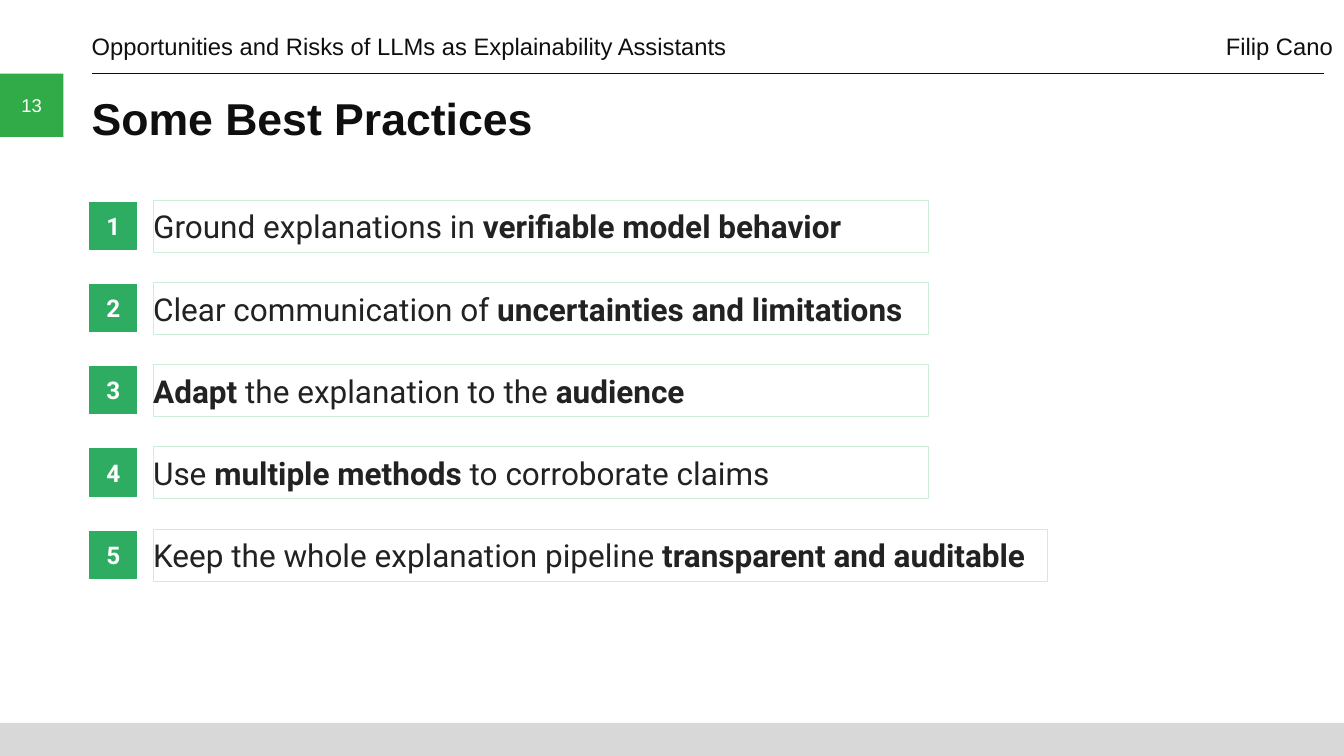
"""Build the slide on best practices for explanations given by language models."""
import lxml.etree
import pptx
import pptx.dml.color
import pptx.enum.shapes
import pptx.enum.text
import pptx.oxml.ns
import pptx.util

Inches = pptx.util.Inches
ALIGN = pptx.enum.text.PP_ALIGN
ANCHOR = pptx.enum.text.MSO_ANCHOR

COLORS = {
    "page_green": "31AB48",
    "badge_green": "2EAD62",
    "box_border": "CFEED9",
    "footer": "D8D8D8",
    "heading": "0F0F0F",
    "body": "222222",
    "white": "FFFFFF",
}

PRACTICES = [
    ("Ground explanations in **verifiable model behavior**", 8.2),
    ("Clear communication of **uncertainties and limitations**", 8.2),
    ("**Adapt** the explanation to the **audience**", 8.2),
    ("Use **multiple methods** to corroborate claims", 8.2),
    ("Keep the whole explanation pipeline **transparent and auditable**", 9.46),
]
FIRST_TOP = 2.12
ROW_STEP = 0.87


def rgb(name):
    return pptx.dml.color.RGBColor.from_string(COLORS[name])


def write_text(shape, text, size, color, font="Arial", bold=False,
               align=ALIGN.LEFT, anchor=ANCHOR.MIDDLE):
    frame = shape.text_frame
    frame.word_wrap = True
    frame.vertical_anchor = anchor
    frame.margin_left = frame.margin_right = 0
    frame.margin_top = frame.margin_bottom = 0
    paragraph = frame.paragraphs[0]
    paragraph.alignment = align
    for index, part in enumerate(text.split("**")):
        if part:
            run = paragraph.add_run()
            run.text = part
            run.font.name = font
            run.font.size = pptx.util.Pt(size)
            run.font.bold = bold or index % 2 == 1
            run.font.color.rgb = rgb(color)
    return paragraph


def add_box(slide, left, top, width, height, fill, line=None):
    shape = slide.shapes.add_shape(
        pptx.enum.shapes.MSO_SHAPE.RECTANGLE,
        Inches(left), Inches(top), Inches(width), Inches(height))
    shape.shadow.inherit = False
    shape.fill.solid()
    shape.fill.fore_color.rgb = rgb(fill)
    if line:
        shape.line.color.rgb = rgb(line)
        shape.line.width = pptx.util.Pt(0.75)
    else:
        shape.line.fill.background()
    return shape


def add_label(slide, left, top, width, height, text, **text_format):
    shape = slide.shapes.add_textbox(
        Inches(left), Inches(top), Inches(width), Inches(height))
    return write_text(shape, text, **text_format)


def add_tab_stop(paragraph, position):
    properties = paragraph._p.get_or_add_pPr()
    tabs = lxml.etree.SubElement(properties, pptx.oxml.ns.qn("a:tabLst"))
    lxml.etree.SubElement(tabs, pptx.oxml.ns.qn("a:tab"),
                          pos=str(Inches(position)), algn="l")


def add_rule(slide, left, right, top):
    rule = slide.shapes.add_connector(
        pptx.enum.shapes.MSO_CONNECTOR.STRAIGHT,
        Inches(left), Inches(top), Inches(right), Inches(top))
    rule.line.color.rgb = rgb("heading")
    rule.line.width = pptx.util.Pt(0.75)
    lxml.etree.SubElement(rule._element.spPr, pptx.oxml.ns.qn("a:effectLst"))


def add_practice(slide, number, text, width):
    top = FIRST_TOP + (number - 1) * ROW_STEP
    badge = add_box(slide, 0.95, top + 0.02, 0.5, 0.5, "badge_green", "badge_green")
    write_text(badge, str(number), 18.5, "white", font="Roboto", bold=True,
               align=ALIGN.CENTER)
    box = add_box(slide, 1.62, top, width, 0.55, "white", "box_border")
    write_text(box, text, 24, "body", font="Roboto")


def main():
    presentation = pptx.Presentation()
    presentation.slide_width = Inches(14.22)
    presentation.slide_height = Inches(8)
    slide = presentation.slides.add_slide(presentation.slide_layouts[6])

    page_box = add_box(slide, 0, 0.78, 0.67, 0.67, "page_green")
    write_text(page_box, "13", 14.1, "white", align=ALIGN.CENTER)
    add_box(slide, 0, 7.65, 14.22, 0.36, "footer")
    add_rule(slide, 0.97, 14.01, 0.78)
    add_label(slide, 0.97, 0.96, 13.06, 0.76, "Some Best Practices",
              size=34, color="heading", bold=True, anchor=ANCHOR.TOP)
    header = add_label(
        slide, 0.97, 0.36, 13.14, 0.28,
        "Opportunities and Risks of LLMs as Explainability Assistants\tFilip Cano",
        size=18.1, color="heading", anchor=ANCHOR.BOTTOM)
    add_tab_stop(header, 12)

    for number, (text, width) in enumerate(PRACTICES, start=1):
        add_practice(slide, number, text, width)
    presentation.save("out.pptx")


if __name__ == "__main__":
    main()
